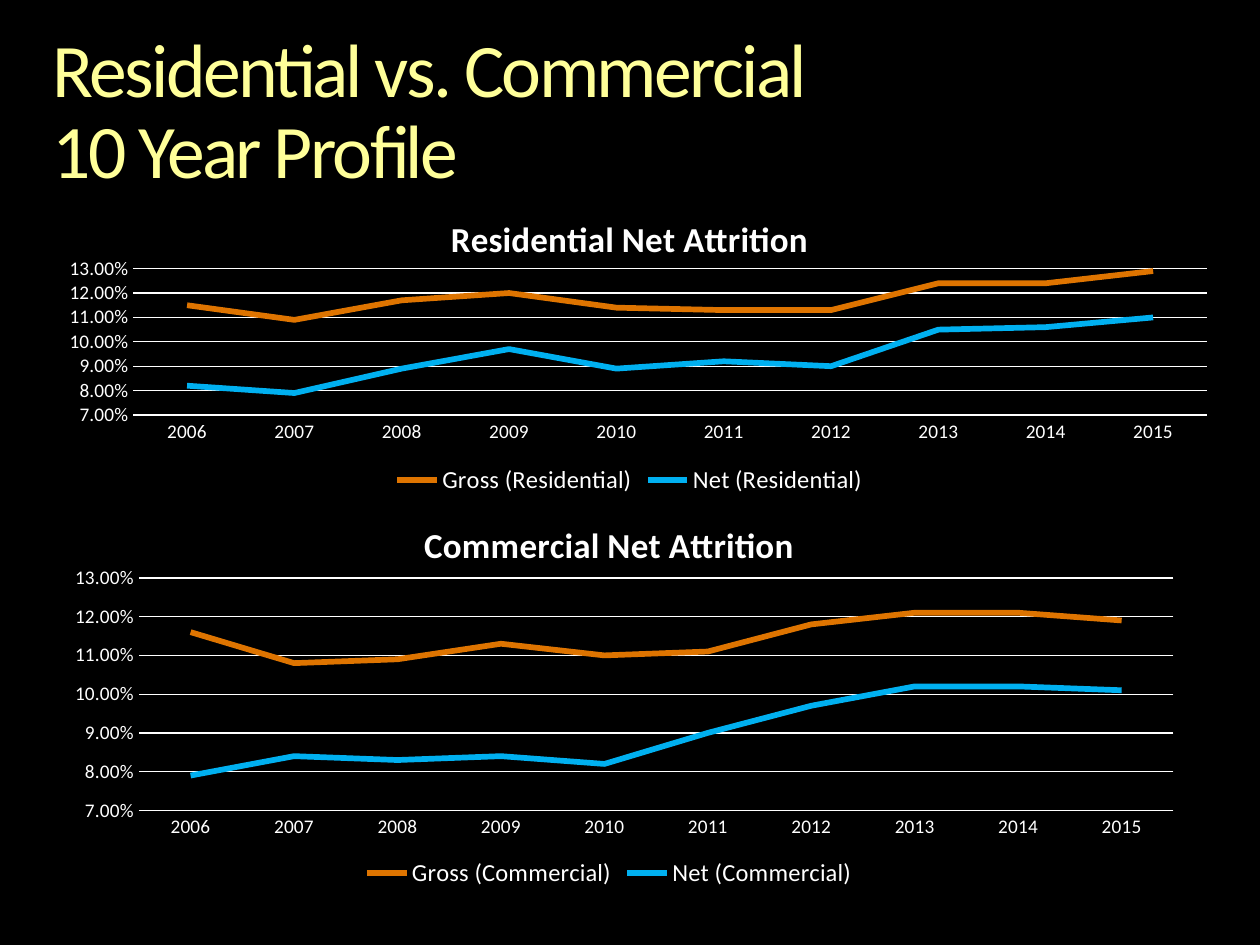
import pptx
import pptx.chart.data
import pptx.dml.color
import pptx.enum.chart
import pptx.enum.text
import pptx.oxml
import pptx.oxml.ns
import pptx.util
from pptx.util import Cm

BLACK, WHITE, YELLOW = "000000", "FFFFFF", "FFFF99"
ORANGE, BLUE = "DE7400", "00B0F0"
YEARS = [str(year) for year in range(2006, 2016)]


def colour(hex_string):
    return pptx.dml.color.RGBColor.from_string(hex_string)


class SlideBuilder:
    """Holds the style and the current slide."""

    font_name = "Calibri"

    def __init__(self, presentation):
        self.slide = presentation.slides.add_slide(presentation.slide_layouts[6])
        background = self.slide.background.fill
        background.solid()
        background.fore_color.rgb = colour(BLACK)

    def style_font(self, font, size, hex_string, bold=False):
        font.name = self.font_name
        font.size = pptx.util.Pt(size)
        font.bold = bold
        font.color.rgb = colour(hex_string)

    def style_line(self, line, hex_string, width):
        line.color.rgb = colour(hex_string)
        line.width = pptx.util.Pt(width)

    def add_title(self, lines, left, top, width, height):
        shape = self.slide.shapes.add_textbox(left, top, width, height)
        frame = shape.text_frame
        frame.word_wrap = True
        frame.vertical_anchor = pptx.enum.text.MSO_ANCHOR.TOP
        frame.margin_left = frame.margin_right = 0
        frame.margin_top = frame.margin_bottom = 0
        paragraph = frame.paragraphs[0]
        paragraph.line_spacing = 0.9
        for index, text in enumerate(lines):
            if index:
                paragraph.add_line_break()
            run = paragraph.add_run()
            run.text = text
            self.style_font(run.font, 43.2, YELLOW)
            run.font._element.set("spc", "-150")

    def add_line_chart(self, title, series_values, plot, left, top, width, height):
        data = pptx.chart.data.CategoryChartData(number_format="0.00%")
        data.categories = YEARS
        for name, values in series_values.items():
            data.add_series(name, values)
        chart = self.slide.shapes.add_chart(
            pptx.enum.chart.XL_CHART_TYPE.LINE, left, top, width, height, data).chart
        self.style_font(chart.font, 10, WHITE)

        # Title and legend
        chart.has_title = True
        run = chart.chart_title.text_frame.paragraphs[0].add_run()
        run.text = title
        self.style_font(run.font, 20, WHITE, bold=True)
        chart.chart_title.include_in_layout = False
        chart.has_legend = True
        chart.legend.position = pptx.enum.chart.XL_LEGEND_POSITION.BOTTOM
        chart.legend.include_in_layout = False
        self.style_font(chart.legend.font, 14, WHITE)

        # Axes
        for axis in (chart.category_axis, chart.value_axis):
            axis.major_tick_mark = pptx.enum.chart.XL_TICK_MARK.NONE
            axis.minor_tick_mark = pptx.enum.chart.XL_TICK_MARK.NONE
            self.style_font(axis.tick_labels.font, 11, WHITE)
        self.style_line(chart.category_axis.format.line, WHITE, 0.75)
        value_axis = chart.value_axis
        value_axis.minimum_scale, value_axis.maximum_scale = 0.07, 0.13
        value_axis.major_unit = 0.01
        value_axis.tick_labels.number_format = "0.00%"
        value_axis.tick_labels.number_format_is_linked = False
        value_axis.format.line.fill.background()
        self.style_line(value_axis.major_gridlines.format.line, WHITE, 0.75)

        # Series
        chart.plots[0].vary_by_categories = False
        for series, hex_string in zip(chart.plots[0].series, (ORANGE, BLUE)):
            series.smooth = False
            series.marker.style = pptx.enum.chart.XL_MARKER_STYLE.NONE
            self.style_line(series.format.line, hex_string, 3.25)

        self.place_plot(chart, plot)

    def place_plot(self, chart, plot):
        """Sets the inner plot area as fractions of the chart."""
        modes = "".join(f'<c:{tag}Mode val="edge"/>' for tag in "xy")
        sizes = "".join(f'<c:{tag} val="{value}"/>' for tag, value in zip("xywh", plot))
        layout = pptx.oxml.parse_xml(
            f'<c:layout {pptx.oxml.ns.nsdecls("c")}><c:manualLayout>'
            f'<c:layoutTarget val="inner"/>{modes}{sizes}</c:manualLayout></c:layout>')
        plot_area = chart._chartSpace.chart.plotArea
        for old_layout in plot_area.findall(pptx.oxml.ns.qn("c:layout")):
            plot_area.remove(old_layout)
        plot_area.insert(0, layout)


def main():
    presentation = pptx.Presentation()
    presentation.slide_width, presentation.slide_height = Cm(25.4), Cm(19.05)
    builder = SlideBuilder(presentation)

    # Heading
    builder.add_title(["Residential vs. Commercial", "10 Year Profile"],
                      Cm(1.06), Cm(0.64), Cm(23.28), Cm(1.85))

    # Residential chart
    builder.add_line_chart(
        "Residential Net Attrition",
        {"Gross (Residential)": [0.115, 0.109, 0.117, 0.12, 0.114,
                                 0.113, 0.113, 0.124, 0.124, 0.129],
         "Net (Residential)": [0.082, 0.079, 0.089, 0.097, 0.089,
                               0.092, 0.09, 0.105, 0.106, 0.11]},
        (0.07, 0.24, 0.93, 0.48), Cm(1.06), Cm(3.94), Cm(23.28), Cm(6.15))

    # Commercial chart
    builder.add_line_chart(
        "Commercial Net Attrition",
        {"Gross (Commercial)": [0.116, 0.108, 0.109, 0.113, 0.11,
                                0.111, 0.118, 0.121, 0.121, 0.119],
         "Net (Commercial)": [0.079, 0.084, 0.083, 0.084, 0.082,
                              0.09, 0.097, 0.102, 0.102, 0.101]},
        (0.1, 0.2, 0.88, 0.59), Cm(0.43), Cm(10.06), Cm(23.7), Cm(7.95))

    presentation.save("out.pptx")


if __name__ == "__main__":
    main()
